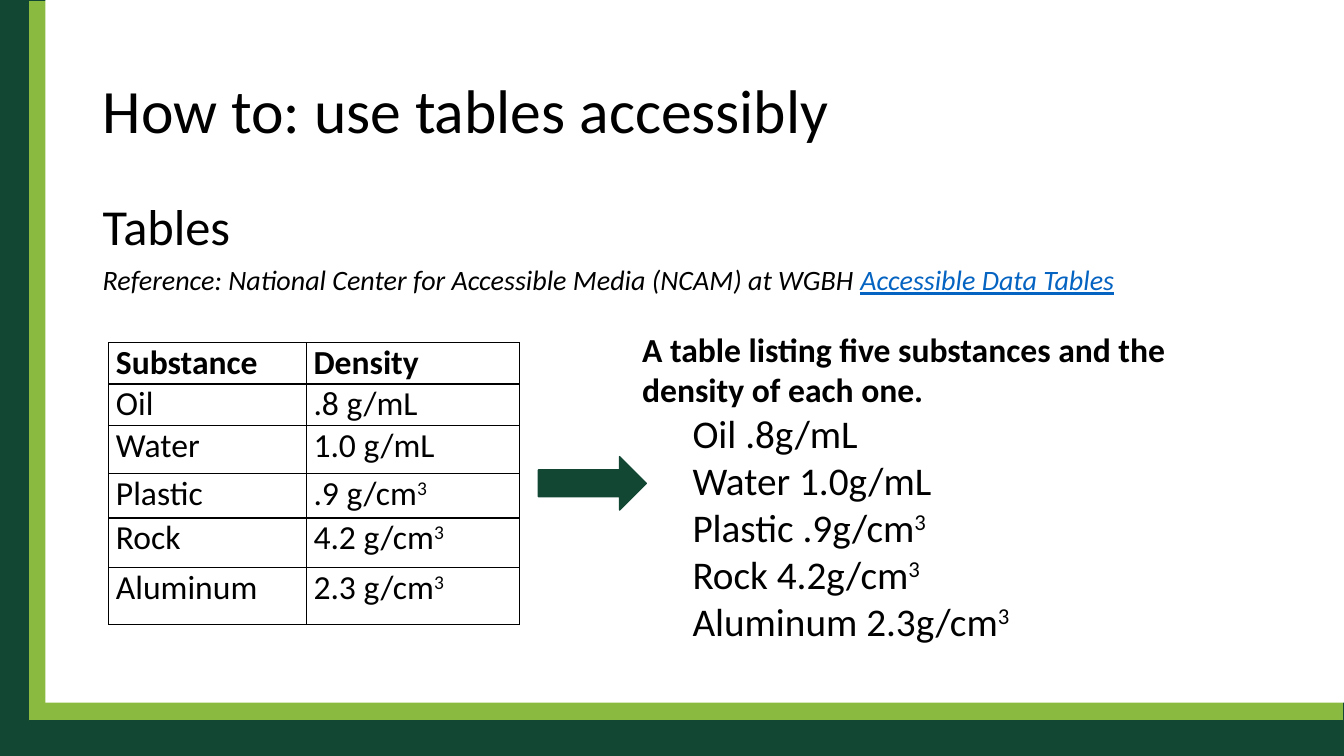
from dataclasses import dataclass

from lxml.etree import SubElement
from pptx import Presentation
from pptx.dml.color import RGBColor
from pptx.enum.shapes import MSO_SHAPE
from pptx.enum.text import MSO_ANCHOR
from pptx.oxml.ns import qn
from pptx.util import Inches, Pt


@dataclass(frozen=True)
class Theme:
    """Colours, font and type sizes of the slide."""
    dark: str = "124734"
    lime: str = "8ABB40"
    white: str = "FFFFFF"
    black: str = "000000"
    link: str = "0563C1"
    font: str = "Calibri"
    title: int = 44
    heading: int = 36
    listing: int = 28
    normal: int = 24
    reference: int = 20


THEME = Theme()
WIDTH, HEIGHT = 13.33, 7.5
SUBSTANCES = [
    ("Oil", ".8", "g/mL", ""),
    ("Water", "1.0", "g/mL", ""),
    ("Plastic", ".9", "g/cm", "3"),
    ("Rock", "4.2", "g/cm", "3"),
    ("Aluminum", "2.3", "g/cm", "3"),
]


def add_run(p, text, size, color=THEME.black, bold=False, italic=False, underline=False):
    """Append a styled run to a paragraph."""
    r = p.add_run()
    r.text = text
    r.font.name = THEME.font
    r.font.size = Pt(size)
    r.font.bold = bold
    r.font.italic = italic
    r.font.underline = underline
    r.font.color.rgb = RGBColor.from_string(color)
    return r


def add_quantity(p, text, power, size):
    """Append text followed by an optional superscript power."""
    add_run(p, text, size)
    if power:
        r = add_run(p, power, size)
        r._r.get_or_add_rPr().set("baseline", "30000")


def add_text_box(s, left, top, width, height, anchor=MSO_ANCHOR.TOP):
    """Add a wrapping text box and return its text frame."""
    tf = s.shapes.add_textbox(
        Inches(left), Inches(top), Inches(width), Inches(height)).text_frame
    tf.word_wrap = True
    tf.vertical_anchor = anchor
    return tf


def add_block(s, kind, left, top, width, height, fill, line=None, weight=1):
    """Add a flat preset shape with an optional outline."""
    sp = s.shapes.add_shape(
        kind, Inches(left), Inches(top), Inches(width), Inches(height))
    sp.shadow.inherit = False
    sp.fill.solid()
    sp.fill.fore_color.rgb = RGBColor.from_string(fill)
    if line:
        sp.line.color.rgb = RGBColor.from_string(line)
        sp.line.width = Pt(weight)
    else:
        sp.line.fill.background()


def add_frame(s):
    """Paint the dark background, the lime band and the white page."""
    s.background.fill.solid()
    s.background.fill.fore_color.rgb = RGBColor.from_string(THEME.dark)
    add_block(s, MSO_SHAPE.RECTANGLE, 0.28, 0, WIDTH - 0.28, 7.15, THEME.lime, THEME.dark, 0.75)
    add_block(s, MSO_SHAPE.RECTANGLE, 0.45, 0, WIDTH - 0.45, 6.97, THEME.white)


def add_headings(s):
    """Add the title, the section heading and its reference line."""
    p = add_text_box(s, 0.92, 0.4, 11.5, 1.45, MSO_ANCHOR.MIDDLE).paragraphs[0]
    p.line_spacing = 0.9
    add_run(p, "How to: use tables accessibly", THEME.title)

    tf = add_text_box(s, 0.92, 2, 11.5, 1.06)
    p = tf.paragraphs[0]
    p.line_spacing = 0.8
    add_run(p, "Tables", THEME.heading)
    p = tf.add_paragraph()
    p.line_spacing = 0.8
    p.space_before = Pt(10)
    add_run(p, "Reference: National Center for Accessible Media (NCAM) at WGBH ",
            THEME.reference, italic=True)
    add_run(p, "Accessible Data Tables", THEME.reference, THEME.link,
            italic=True, underline=True)


def style_cell(cell):
    """Give a cell a plain fill, tight margins and thin black borders."""
    cell.margin_left = cell.margin_right = Inches(0.07)
    cell.margin_top = cell.margin_bottom = 0
    tc_pr = cell._tc.get_or_add_tcPr()
    for side in ("a:lnL", "a:lnR", "a:lnT", "a:lnB"):
        ln = SubElement(tc_pr, qn(side), w=str(Pt(1)))
        fill = SubElement(ln, qn("a:solidFill"))
        SubElement(fill, qn("a:srgbClr"), val=THEME.black)
    cell.fill.background()


def add_density_table(s):
    """Add the table of substances and densities."""
    widths = (1.96, 2.11)
    heights = (0.41, 0.41, 0.48, 0.44, 0.49, 0.57)
    table = s.shapes.add_table(
        len(heights), len(widths), Inches(1.08), Inches(3.4),
        Inches(sum(widths)), Inches(sum(heights))).table
    table.horz_banding = False
    for column, width in zip(table.columns, widths):
        column.width = Inches(width)
    for row, height in zip(table.rows, heights):
        row.height = Inches(height)
    for cell in table.iter_cells():
        style_cell(cell)
    for column, label in enumerate(("Substance", "Density")):
        add_run(table.cell(0, column).text_frame.paragraphs[0], label, THEME.normal, bold=True)
    for row, (name, value, unit, power) in enumerate(SUBSTANCES, 1):
        add_run(table.cell(row, 0).text_frame.paragraphs[0], name, THEME.normal)
        add_quantity(table.cell(row, 1).text_frame.paragraphs[0],
                     f"{value} {unit}", power, THEME.normal)


def add_density_list(s):
    """Add the text equivalent of the table."""
    tf = add_text_box(s, 6.27, 3.21, 6.38, 3.7)
    add_run(tf.paragraphs[0], "A table listing five substances and the density of each one.",
            THEME.normal, bold=True)
    for name, value, unit, power in SUBSTANCES:
        p = tf.add_paragraph()
        p.level = 1
        p_pr = p._p.get_or_add_pPr()
        p_pr.set("marL", str(Inches(0.5)))
        p_pr.set("indent", "0")
        add_quantity(p, f"{name} {value}{unit}", power, THEME.listing)


def main():
    """Build the slide and save it."""
    prs = Presentation()
    prs.slide_width, prs.slide_height = Inches(WIDTH), Inches(HEIGHT)
    s = prs.slides.add_slide(prs.slide_layouts[6])
    add_frame(s)
    add_headings(s)
    add_density_table(s)
    add_density_list(s)
    add_block(s, MSO_SHAPE.RIGHT_ARROW, 5.34, 4.53, 1.07, 0.53, THEME.dark, THEME.dark)
    prs.save("out.pptx")


if __name__ == "__main__":
    main()
